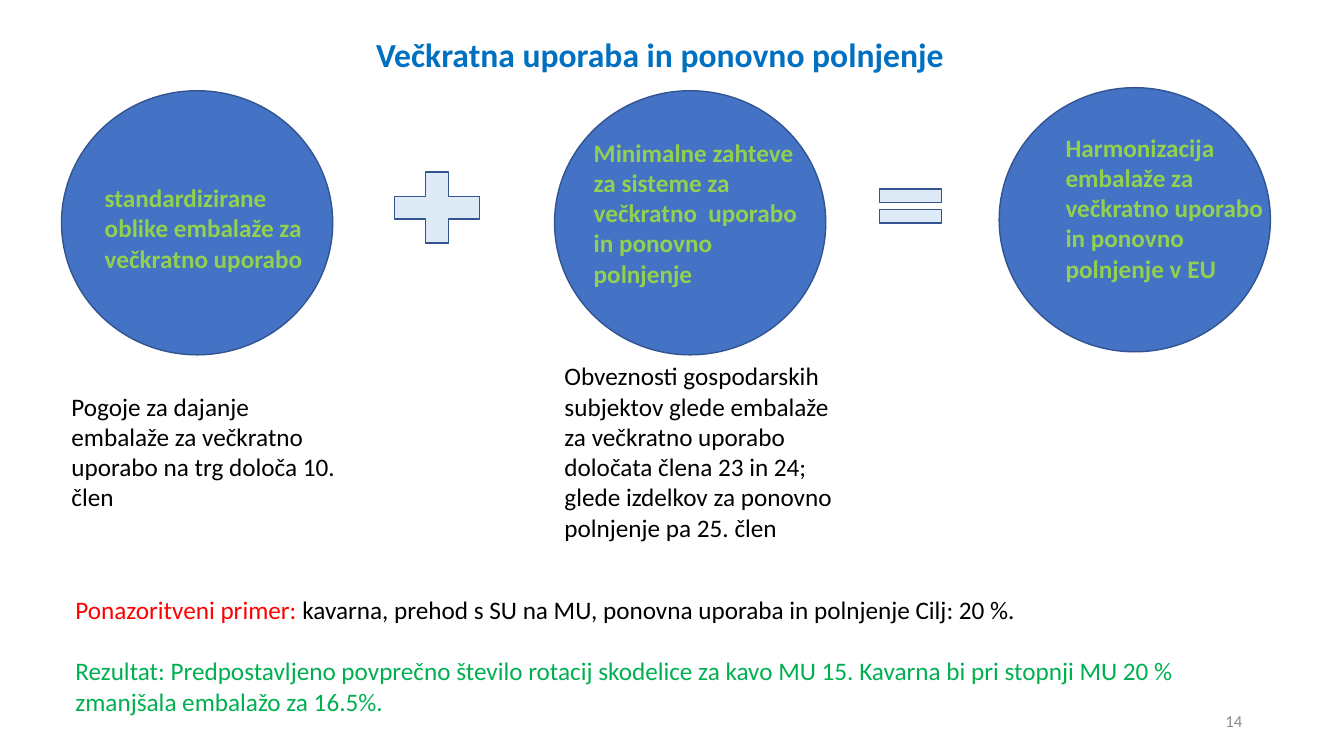
from pptx import Presentation
from pptx.dml.color import RGBColor
from pptx.enum.shapes import MSO_SHAPE
from pptx.enum.text import MSO_ANCHOR, MSO_AUTO_SIZE, PP_ALIGN
from pptx.util import Inches, Pt

COLORS = {
    "circle": "4472C4",
    "outline": "325491",
    "operator": "DEEBF7",
    "title": "0070C0",
    "label": "92D050",
    "body": "000000",
    "example": "FF0000",
    "result": "00B050",
    "number": "8C8C8C",
}


class SlideBuilder:
    """Draws styled elements on the current slide."""

    def __init__(self, slide, font="Calibri"):
        self.slide = slide
        self.font = font

    def color(self, name):
        return RGBColor.from_string(COLORS[name])

    def shape(self, kind, left, top, width, height, fill):
        shape = self.slide.shapes.add_shape(
            kind, Inches(left), Inches(top), Inches(width), Inches(height))
        shape.shadow.inherit = False
        shape.fill.solid()
        shape.fill.fore_color.rgb = self.color(fill)
        shape.line.color.rgb = self.color("outline")
        shape.line.width = Pt(1)

    def text(self, left, top, width, height, paragraphs, size=18, bold=False,
             align=PP_ALIGN.LEFT, anchor=MSO_ANCHOR.TOP, gap=0, grow=True):
        box = self.slide.shapes.add_textbox(
            Inches(left), Inches(top), Inches(width), Inches(height))
        frame = box.text_frame
        frame.word_wrap = True
        frame.auto_size = MSO_AUTO_SIZE.SHAPE_TO_FIT_TEXT if grow else MSO_AUTO_SIZE.NONE
        frame.vertical_anchor = anchor
        for index, runs in enumerate(paragraphs):
            paragraph = frame.add_paragraph() if index else frame.paragraphs[0]
            paragraph.alignment = align
            if index:
                paragraph.space_before = Pt(gap)
            for words, color in runs:
                run = paragraph.add_run()
                run.text = words
                run.font.name = self.font
                run.font.size = Pt(size)
                run.font.bold = bold
                run.font.color.rgb = self.color(color)


def main():
    presentation = Presentation()
    presentation.slide_width = Inches(13.33)
    presentation.slide_height = Inches(7.5)
    builder = SlideBuilder(presentation.slides.add_slide(presentation.slide_layouts[6]))

    for left, top in ((9.91, 0.87), (5.5, 0.9), (0.61, 0.9)):
        builder.shape(MSO_SHAPE.OVAL, left, top, 2.69, 2.62, "circle")

    builder.text(1.5, 0.29, 10.09, 0.5,
                 [[("Večkratna uporaba in ponovno polnjenje", "title")]],
                 size=24, bold=True, align=PP_ALIGN.CENTER)

    circle_labels = (
        (0.94, 1.76, 2.25, 1.01, "standardizirane oblike embalaže za večkratno uporabo"),
        (5.79, 1.31, 2.38, 1.62,
         "Minimalne zahteve za sisteme za večkratno  uporabo in ponovno polnjenje"),
        (10.47, 1.26, 2.25, 1.62,
         "Harmonizacija embalaže za večkratno uporabo in ponovno polnjenje v EU"),
    )
    for left, top, width, height, words in circle_labels:
        builder.text(left, top, width, height, [[(words, "label")]], bold=True)

    builder.shape(MSO_SHAPE.MATH_PLUS, 3.76, 1.58, 1.15, 0.96, "operator")
    builder.shape(MSO_SHAPE.MATH_EQUAL, 8.61, 1.76, 0.84, 0.57, "operator")

    explanations = (
        (5.5, 3.53, 2.22,
         "Obveznosti gospodarskih subjektov glede embalaže za večkratno uporabo "
         "določata člena 23 in 24; glede izdelkov za ponovno polnjenje pa 25. člen"),
        (0.61, 3.83, 1.31,
         "Pogoje za dajanje embalaže za večkratno uporabo na trg določa 10. člen"),
    )
    for left, top, height, words in explanations:
        builder.text(left, top, 2.88, height, [[(words, "body")]])

    builder.text(9.42, 6.95, 3, 0.4, [[("14", "number")]], size=12,
                 align=PP_ALIGN.RIGHT, anchor=MSO_ANCHOR.MIDDLE, grow=False)

    builder.text(0.65, 5.85, 11.8, 1.31, [
        [("Ponazoritveni primer: ", "example"),
         ("kavarna, prehod s SU na MU, ponovna uporaba in polnjenje Cilj: 20 %.", "body")],
        [("Rezultat: Predpostavljeno povprečno število rotacij skodelice za kavo MU 15. "
          "Kavarna bi pri stopnji MU 20 % zmanjšala embalažo za 16.5%.", "result")],
    ], gap=22)

    presentation.save("out.pptx")


if __name__ == "__main__":
    main()
